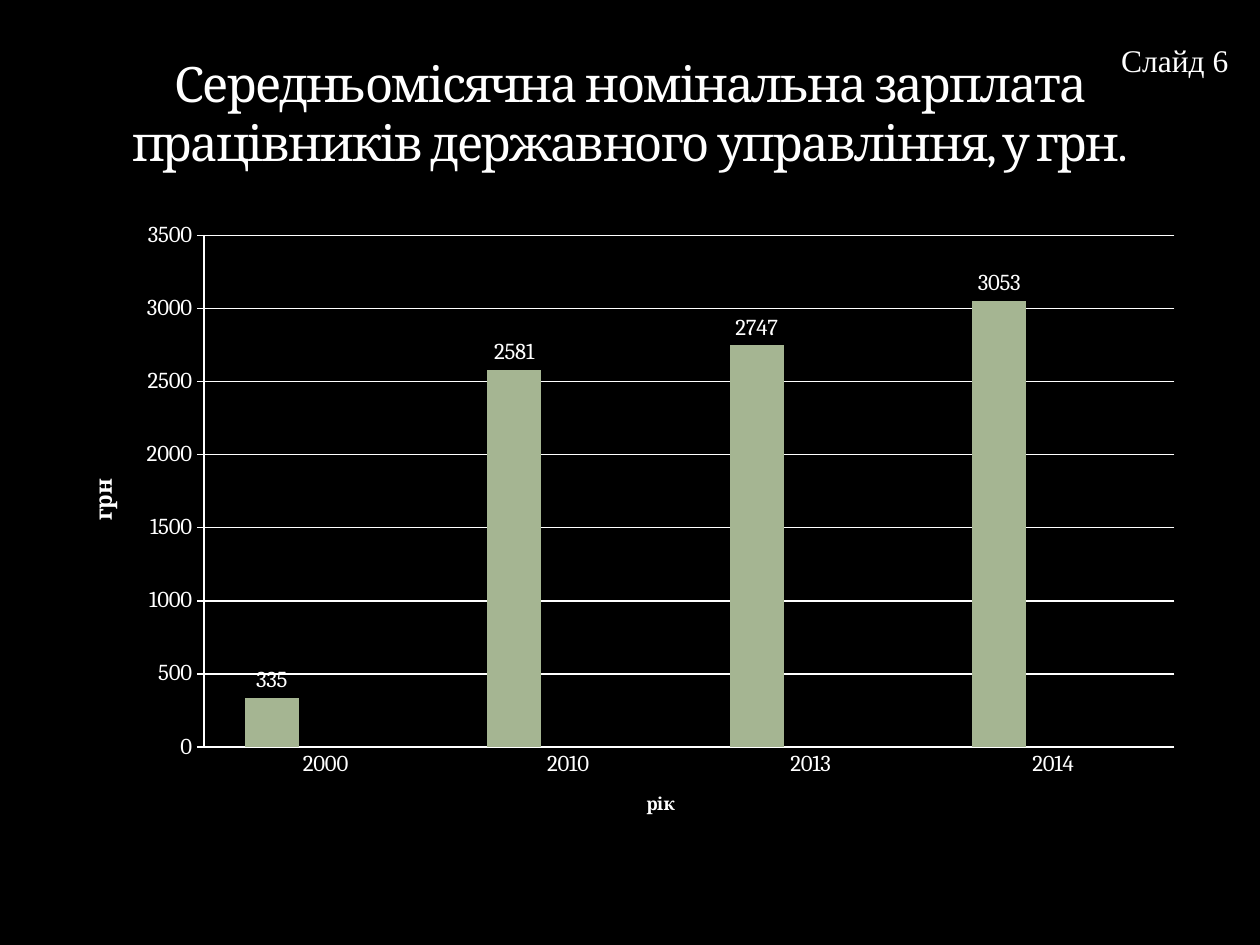
"""Build the slide on average monthly nominal pay in public administration."""
from pptx import Presentation
from pptx.chart.data import CategoryChartData
from pptx.dml.color import RGBColor
from pptx.enum.chart import XL_CHART_TYPE, XL_LABEL_POSITION, XL_TICK_MARK
from pptx.enum.text import MSO_ANCHOR, PP_ALIGN
from pptx.util import Inches, Pt


def color(value):
    """Turn a hex string into a colour."""
    return RGBColor.from_string(value)


class SlideBuilder:
    """Hold the style and the current slide."""

    background = "000000"
    ink = "FFFFFF"
    bars = ("A5B592", "F3A447", "E7BC29")
    heading_font = "Cambria"
    label_font = "Times New Roman"

    def __init__(self, deck):
        """Add a title-only slide with a plain background."""
        self.slide = deck.slides.add_slide(deck.slide_layouts[5])
        fill = self.slide.background.fill
        fill.solid()
        fill.fore_color.rgb = color(self.background)

    def format_font(self, font, **values):
        """Apply format values and the ink colour to a font."""
        for name, value in values.items():
            setattr(font, name, value)
        font.color.rgb = color(self.ink)

    def title(self, text, left, top, width, height):
        """Place and format the title placeholder."""
        box = self.slide.shapes.title
        place = {"left": left, "top": top, "width": width, "height": height}
        for name, value in place.items():
            setattr(box, name, Inches(value))
        frame = box.text_frame
        frame.word_wrap = True
        frame.vertical_anchor = MSO_ANCHOR.BOTTOM
        para = frame.paragraphs[0]
        para.alignment = PP_ALIGN.CENTER
        span = para.add_run()
        span.text = text
        self.format_font(span.font, name=self.heading_font, size=Pt(27.9))
        span._r.get_or_add_rPr().set("spc", "-100")

    def label(self, text, left, top, width, height):
        """Add a single-line text box."""
        box = self.slide.shapes.add_textbox(*map(Inches, (left, top, width, height)))
        box.text_frame.word_wrap = False
        span = box.text_frame.paragraphs[0].add_run()
        span.text = text
        self.format_font(span.font, name=self.label_font, size=Pt(18))

    def axis(self, axis, title, title_size, tick_mark):
        """Format an axis with its title, line and tick labels."""
        axis.major_tick_mark = tick_mark
        axis.minor_tick_mark = XL_TICK_MARK.NONE
        self.format_font(axis.tick_labels.font, name=self.heading_font, size=Pt(13))
        self.line(axis.format.line)
        span = axis.axis_title.text_frame.paragraphs[0].add_run()
        span.text = title
        self.format_font(span.font, name=self.heading_font, size=Pt(title_size), bold=True)

    def line(self, line):
        """Draw a thin line in the ink colour."""
        line.color.rgb = color(self.ink)
        line.width = Pt(1)

    def column_chart(self, categories, series, left, top, width, height):
        """Add a clustered column chart with value labels."""
        data = CategoryChartData()
        data.categories = categories
        for name, values in series.items():
            data.add_series(name, values)
        chart = self.slide.shapes.add_chart(
            XL_CHART_TYPE.COLUMN_CLUSTERED, *map(Inches, (left, top, width, height)), data
        ).chart
        chart.has_legend = False
        chart.has_title = False
        self.format_font(chart.font, name=self.heading_font, size=Pt(10))
        self.axis(chart.category_axis, "рік", 10, XL_TICK_MARK.NONE)
        self.axis(chart.value_axis, "грн", 13, XL_TICK_MARK.OUTSIDE)
        scale = {"minimum_scale": 0, "maximum_scale": 3500, "major_unit": 500}
        for name, value in scale.items():
            setattr(chart.value_axis, name, value)
        self.line(chart.value_axis.major_gridlines.format.line)
        plot = chart.plots[0]
        for name, value in {"gap_width": 150, "overlap": 0, "vary_by_categories": False}.items():
            setattr(plot, name, value)
        for bar, shade in zip(plot.series, self.bars):
            bar.format.fill.solid()
            bar.format.fill.fore_color.rgb = color(shade)
        labels = plot.series[0].data_labels
        labels.show_value = True
        labels.position = XL_LABEL_POSITION.OUTSIDE_END
        self.format_font(labels.font, name=self.heading_font, size=Pt(13))


def main():
    """Build and save the deck."""
    deck = Presentation()
    deck.slide_width, deck.slide_height = Inches(10), Inches(7.5)
    builder = SlideBuilder(deck)
    builder.title(
        "Середньомісячна номінальна зарплата працівників державного управління, у грн.",
        0.5, 0, 9, 1.41,
    )
    builder.label("Слайд 6", 8.8, 0.28, 1.06, 0.4)
    series = {
        "Series 1": (335, 2581, 2747, 3053),
        "Series 2": (None,) * 4,
        "Series 3": (None,) * 4,
    }
    builder.column_chart(("2000", "2010", "2013", "2014"), series, 0.5, 1.67, 9, 5)
    deck.save("out.pptx")


if __name__ == "__main__":
    main()
